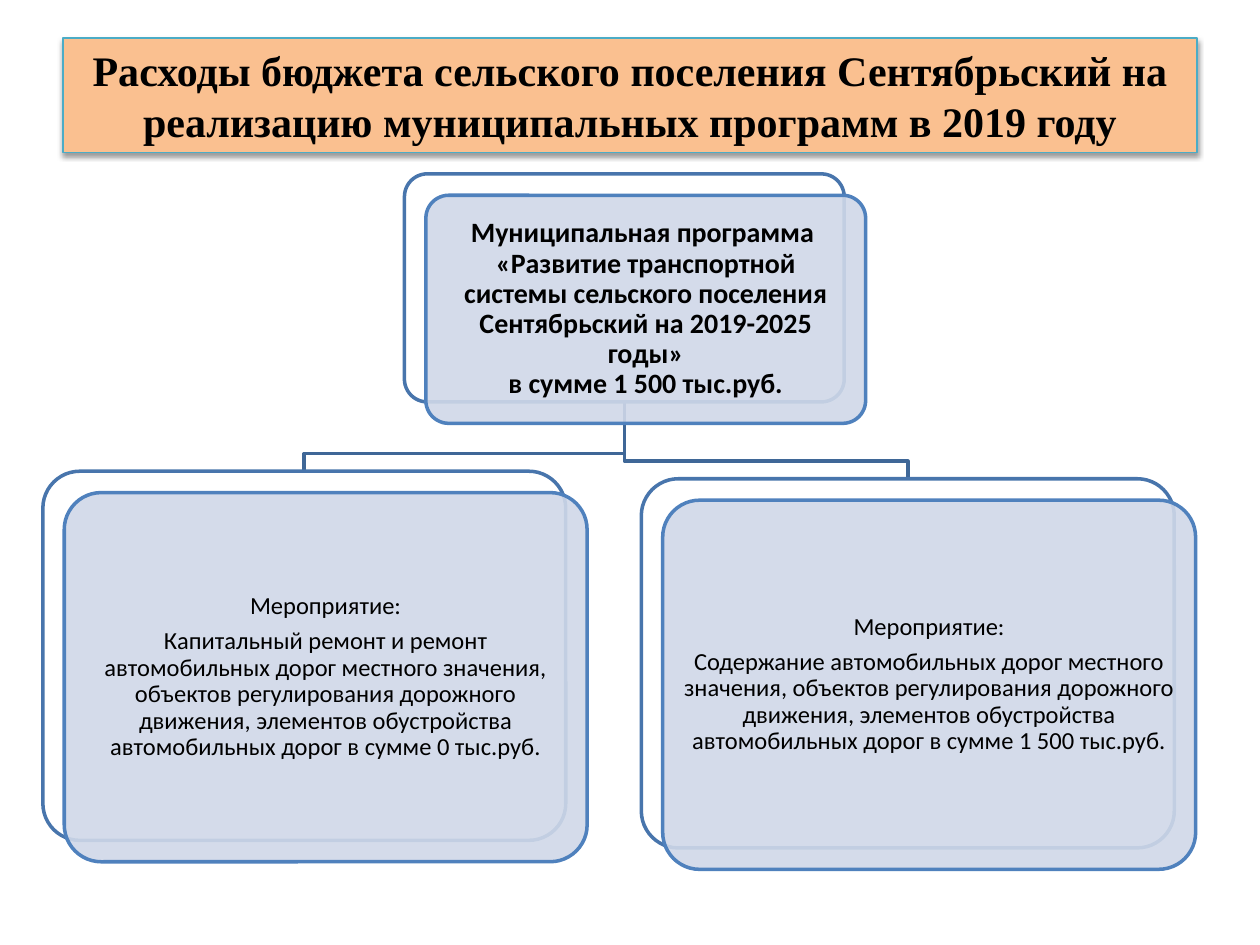
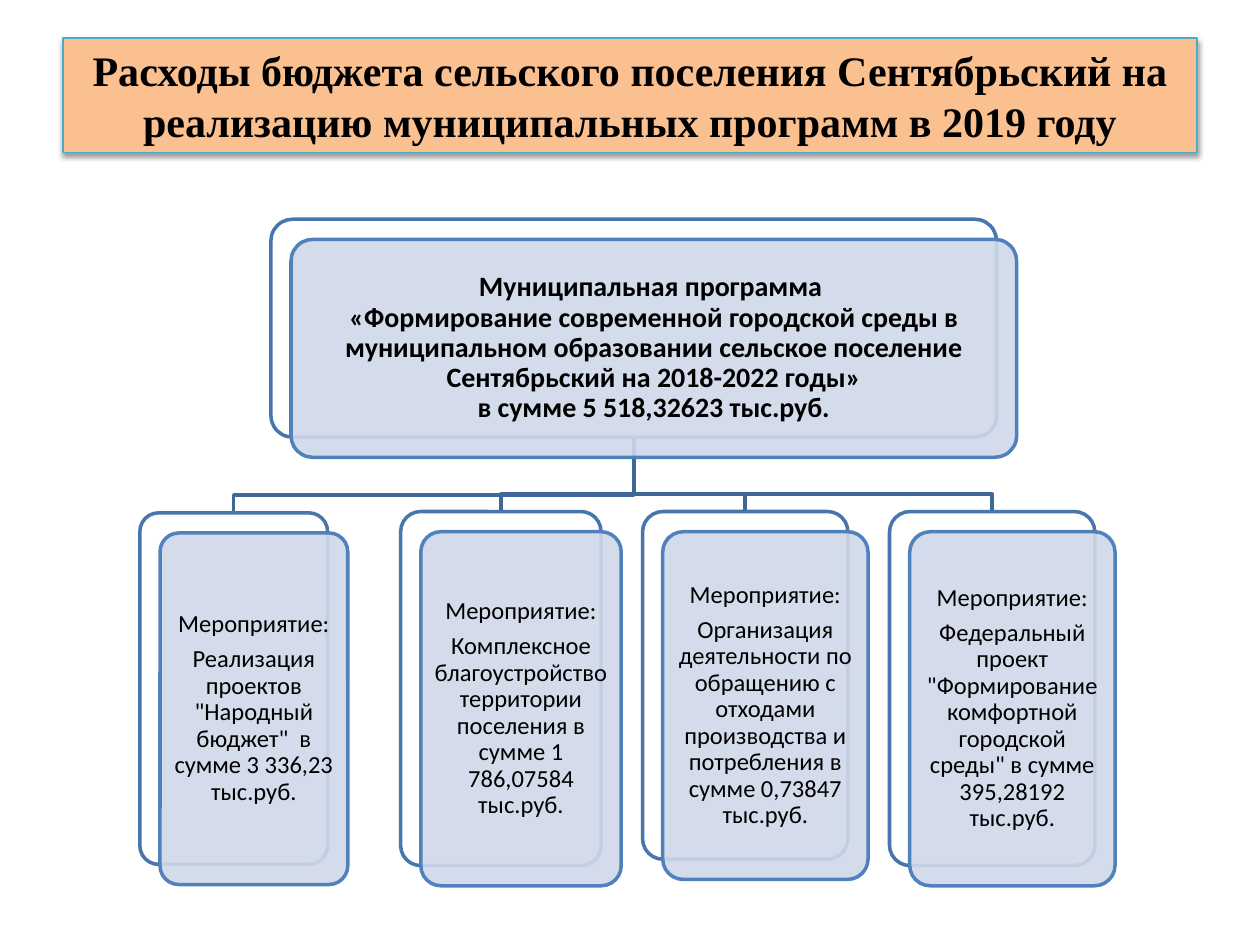
from itertools import chain

from lxml.etree import SubElement
from pptx import Presentation
from pptx.dml.color import RGBColor
from pptx.enum.shapes import MSO_SHAPE
from pptx.enum.text import MSO_ANCHOR, MSO_AUTO_SIZE, PP_ALIGN
from pptx.oxml.ns import qn
from pptx.util import Inches, Pt

COLORS = {
    "text": "000000",
    "title_fill": "FAC090",
    "title_line": "4BACC6",
    "back_fill": "FFFFFF",
    "back_line": "4875AC",
    "front_fill": "D0D8E8",
    "front_line": "4F81BD",
    "branch": "3F6797",
}
TITLE = "Расходы бюджета сельского поселения Сентябрьский на реализацию муниципальных программ в 2019 году"
TITLE_BOX = (0.5, 0.3, 9, 0.91)
TITLE_FONT = {"name": "Times New Roman", "size": Pt(24), "bold": True}
PROGRAM = {
    "inset": 0.07,
    "font": {"name": "Calibri", "size": Pt(16), "bold": True},
    "para": {"alignment": PP_ALIGN.CENTER, "line_spacing": 0.9, "space_before": Pt(0), "space_after": Pt(0)},
}
MEASURE = {
    "inset": 0.06,
    "font": {"name": "Calibri", "size": Pt(14), "bold": False},
    "para": {**PROGRAM["para"], "space_after": Pt(4.9)},
}
BEND = 0.14
SLIDES = [
    {
        "offset": 0.17,
        "program": (
            (3.21, 1.38, 3.49, 1.81),
            "«Развитие транспортной системы сельского поселения Сентябрьский на 2019-2025 годы»",
            "в сумме 1 500 тыс.руб.",
        ),
        "measures": [
            ((0.34, 3.74, 4.15, 2.93),
             "Капитальный ремонт и ремонт автомобильных дорог местного значения, объектов регулирования "
             "дорожного движения, элементов обустройства автомобильных дорог в сумме 0 тыс.руб."),
            ((5.09, 3.8, 4.23, 2.93),
             "Содержание автомобильных дорог местного значения, объектов регулирования дорожного движения, "
             "элементов обустройства автомобильных дорог в сумме 1 500 тыс.руб."),
        ],
    },
    {
        "offset": 0.16,
        "program": (
            (2.15, 1.74, 5.76, 1.73),
            "«Формирование современной городской среды в муниципальном образовании сельское поселение "
            "Сентябрьский на 2018-2022 годы»",
            "в сумме 5 518,32623 тыс.руб.",
        ),
        "measures": [
            ((1.11, 4.07, 1.49, 2.79),
             'Реализация проектов "Народный бюджет"  в сумме 3 336,23 тыс.руб.'),
            ((3.18, 4.06, 1.59, 2.81),
             "Комплексное благоустройство территории поселения в сумме 1 786,07584 тыс.руб."),
            ((5.1, 4.06, 1.63, 2.76),
             "Организация деятельности по обращению с отходами производства и потребления "
             "в сумме 0,73847 тыс.руб."),
            ((7.06, 4.06, 1.63, 2.81),
             'Федеральный проект "Формирование комфортной городской среды" в сумме 395,28192 тыс.руб.'),
        ],
    },
]


def rgb(name):
    """Return the named colour."""
    return RGBColor.from_string(COLORS[name])


def apply(obj, values):
    """Set each attribute given in the dict."""
    for name, value in values.items():
        setattr(obj, name, value)


def paint(sp, fill, line, width):
    """Give a shape its fill and line without a shadow."""
    if fill:
        sp.fill.solid()
        sp.fill.fore_color.rgb = rgb(fill)
    else:
        sp.fill.background()
    sp.line.color.rgb = rgb(line)
    sp.line.width = Pt(width)
    sp.shadow.inherit = False


def write(tf, texts, para, font):
    """Write one formatted paragraph for each text."""
    for i, text in enumerate(texts):
        p = tf.add_paragraph() if i else tf.paragraphs[0]
        apply(p, para)
        r = p.add_run()
        r.text = text
        apply(r.font, font)
        r.font.color.rgb = rgb("text")


def add_title(s, box):
    """Format the title placeholder as a shadowed band."""
    sp = s.shapes.title
    apply(sp, dict(zip(("left", "top", "width", "height"), map(Inches, box))))
    paint(sp, "title_fill", "title_line", 1)
    effects = sp._element.spPr.find(qn("a:effectLst"))
    shadow = SubElement(effects, qn("a:outerShdw"), blurRad=str(Pt(3.1)), dist=str(Pt(1.6)),
                        dir="5400000", rotWithShape="0")
    color = SubElement(shadow, qn("a:srgbClr"), val=COLORS["text"])
    SubElement(color, qn("a:alpha"), val="38000")
    apply(sp.text_frame, {"word_wrap": True, "vertical_anchor": MSO_ANCHOR.MIDDLE,
                          "auto_size": MSO_AUTO_SIZE.SHAPE_TO_FIT_TEXT})
    write(sp.text_frame, [TITLE], {"alignment": PP_ALIGN.CENTER}, TITLE_FONT)


def add_branch(s, parent, child):
    """Draw a bent line from the parent's bottom to the child's top."""
    x, y, w, h = parent
    cx, cy, cw, _ = child
    start, end = x + w / 2, cx + cw / 2
    points = [(start, cy - BEND), (end, cy - BEND), (end, cy)]
    builder = s.shapes.build_freeform(Inches(start), Inches(y + h))
    builder.add_line_segments([(Inches(a), Inches(b)) for a, b in points], close=False)
    paint(builder.convert_to_shape(), None, "branch", 2)


def add_card(s, box, offset, texts, style):
    """Draw a white card with a translucent text card shifted over it."""
    x, y, w, h = box
    for side, shift in (("back", 0), ("front", offset)):
        sp = s.shapes.add_shape(MSO_SHAPE.ROUNDED_RECTANGLE,
                                *map(Inches, (x + shift, y + shift, w, h)))
        sp.adjustments[0] = 0.1
        paint(sp, f"{side}_fill", f"{side}_line", 2)
    color = sp._element.spPr.find(qn("a:solidFill"))[0]
    SubElement(color, qn("a:alpha"), val="90000")
    margins = (f"margin_{edge}" for edge in ("left", "top", "right", "bottom"))
    apply(sp.text_frame, {"word_wrap": True, "vertical_anchor": MSO_ANCHOR.MIDDLE,
                          **dict.fromkeys(margins, Inches(style["inset"]))})
    write(sp.text_frame, texts, style["para"], style["font"])


def add_program_slide(prs, offset, program, measures):
    """Build a slide with a program and the measures under it."""
    s = prs.slides.add_slide(prs.slide_layouts[5])
    add_title(s, TITLE_BOX)
    parent, *lines = program
    for child, _ in reversed(measures):
        add_branch(s, parent, child)
    cards = chain(
        [(parent, ["Муниципальная программа ", *lines], PROGRAM)],
        ((box, ["Мероприятие:", text], MEASURE) for box, text in measures),
    )
    for box, texts, style in cards:
        add_card(s, box, offset, texts, style)


def main():
    """Build and save the presentation."""
    prs = Presentation()
    apply(prs, {"slide_width": Inches(10), "slide_height": Inches(7.5)})
    for content in SLIDES:
        add_program_slide(prs, **content)
    prs.save("out.pptx")


if __name__ == "__main__":
    main()
